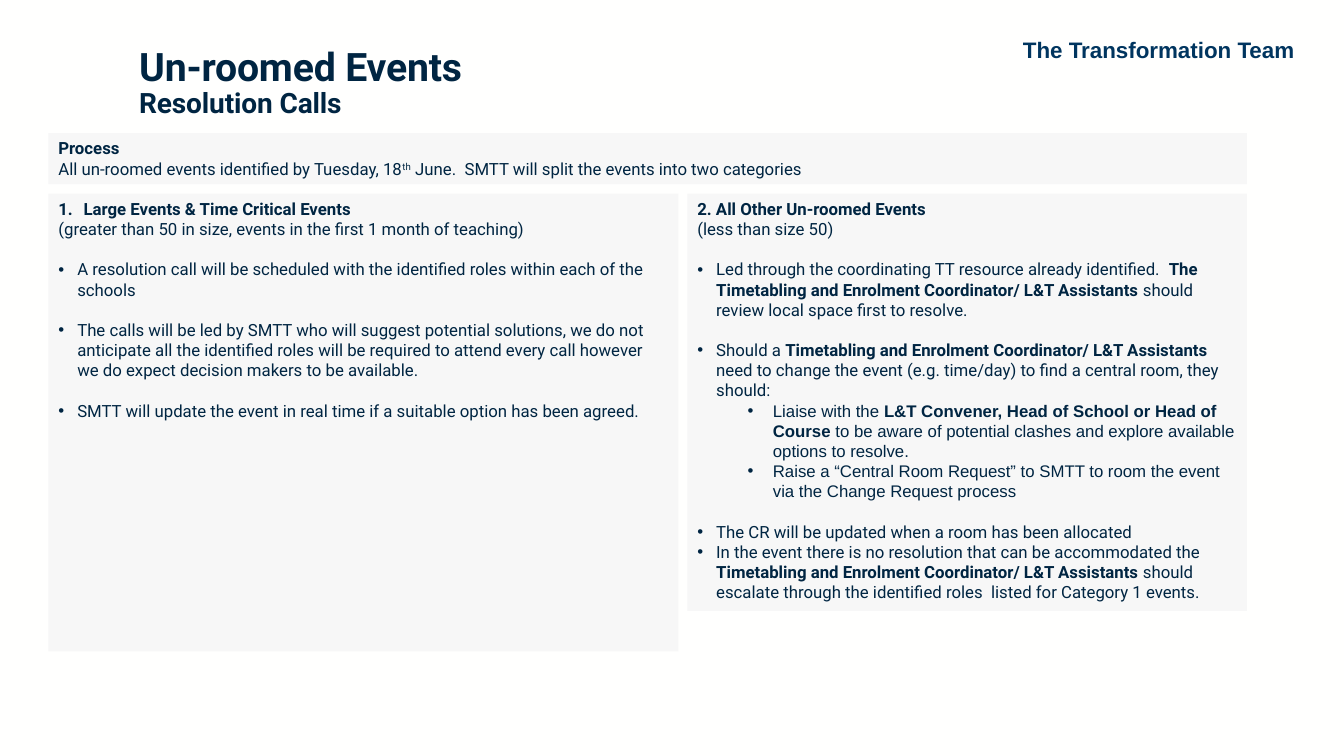
from dataclasses import dataclass

from lxml.etree import SubElement
from pptx import Presentation
from pptx.dml.color import RGBColor
from pptx.enum.shapes import MSO_SHAPE
from pptx.enum.text import MSO_ANCHOR, PP_ALIGN
from pptx.oxml.ns import qn
from pptx.util import Pt


@dataclass(frozen=True)
class Theme:
    background: RGBColor = RGBColor(0xFF, 0xFF, 0xFE)
    panel: RGBColor = RGBColor(0xF7, 0xF7, 0xF7)
    ink: RGBColor = RGBColor(0x00, 0x25, 0x42)
    team: RGBColor = RGBColor(0x00, 0x35, 0x5F)
    main_font: str = "Roboto"
    second_font: str = "Arial"
    title_size: int = 28
    subtitle_size: int = 20
    team_size: int = 16
    body_size: int = 12
    gap: float = 14.4


@dataclass
class Line:
    spans: list
    bullet: str = ""
    margin: float = 0
    hang: float = 0
    before: float = 0
    font: str = Theme.main_font


def point(*spans, before=0):
    return Line(list(spans), "•", 13.5, 13.5, before)


def subpoint(*spans):
    return Line(list(spans), "•", 54, 18, font=Theme.second_font)


class Builder:
    def __init__(self, deck, theme):
        self.theme = theme
        self.page = deck.slides.add_slide(deck.slide_layouts[5])
        fill = self.page.background.fill
        fill.solid()
        fill.fore_color.rgb = theme.background

    def span(self, para, text, size, bold=False, font=None, color=None):
        span = para.add_run()
        span.text = text
        span.font.size = Pt(size)
        span.font.bold = bold
        span.font.name = font or self.theme.main_font
        span.font.color.rgb = color or self.theme.ink
        return span

    def title(self, left, top, width, height, heading, subheading):
        box = self.page.shapes.title
        box.left, box.top, box.width, box.height = Pt(left), Pt(top), Pt(width), Pt(height)
        box.text_frame.word_wrap = True
        box.text_frame.vertical_anchor = MSO_ANCHOR.MIDDLE
        para = box.text_frame.paragraphs[0]
        para.alignment = PP_ALIGN.LEFT
        para.line_spacing = 0.9
        first = self.span(para, heading, self.theme.title_size, True)
        para.add_line_break()
        second = self.span(para, subheading, self.theme.subtitle_size, True)
        for span in (first, second):
            span.font._element.set("spc", "-10")

    def label(self, left, top, width, height, text):
        box = self.page.shapes.add_textbox(Pt(left), Pt(top), Pt(width), Pt(height))
        box.text_frame.word_wrap = True
        para = box.text_frame.paragraphs[0]
        para.alignment = PP_ALIGN.CENTER
        self.span(para, text, self.theme.team_size, True, self.theme.second_font, self.theme.team)

    def bullet(self, para, line):
        properties = para._p.get_or_add_pPr()
        properties.set("marL", str(Pt(line.margin)))
        properties.set("indent", str(-Pt(line.hang)))
        if line.bullet == "1.":
            SubElement(properties, qn("a:buFont"), typeface="+mj-lt")
            SubElement(properties, qn("a:buAutoNum"), type="arabicPeriod")
        else:
            SubElement(properties, qn("a:buFont"), typeface=self.theme.second_font)
            SubElement(properties, qn("a:buChar"), char=line.bullet)

    def panel(self, left, top, width, height, lines):
        box = self.page.shapes.add_shape(
            MSO_SHAPE.RECTANGLE, Pt(left), Pt(top), Pt(width), Pt(height))
        box.shadow.inherit = False
        box.fill.solid()
        box.fill.fore_color.rgb = self.theme.panel
        box.line.fill.background()
        frame = box.text_frame
        frame.word_wrap = True
        frame.vertical_anchor = MSO_ANCHOR.TOP
        for index, line in enumerate(lines):
            para = frame.add_paragraph() if index else frame.paragraphs[0]
            para.alignment = PP_ALIGN.LEFT
            if line.before:
                para.space_before = Pt(line.before)
            if line.bullet:
                self.bullet(para, line)
            for text, style in line.spans:
                span = self.span(para, text, self.theme.body_size, style == "bold", line.font)
                if style == "super":
                    span.font._element.set("baseline", "30000")


def main():
    theme = Theme()
    deck = Presentation()
    deck.slide_width, deck.slide_height = Pt(960), Pt(540)
    slide = Builder(deck, theme)
    gap = theme.gap
    coordinators = ("Timetabling and Enrolment Coordinator/ L&T Assistants ", "bold")

    process = [
        Line([("Process", "bold")]),
        Line([("All un-roomed events identified by Tuesday, 18", ""), ("th", "super"),
              (" June.  SMTT will split the events into two categories", "")]),
    ]
    large_events = [
        Line([("Large Events & Time Critical Events", "bold")], "1.", 18, 18),
        Line([("(greater than 50 in size, events in the first 1 month of teaching)", "")]),
        point(("A resolution call will be scheduled with the identified roles within each "
               "of the schools", ""), before=gap),
        point(("The calls will be led by SMTT who will suggest potential solutions, we do not "
               "anticipate all the identified roles will be required to attend every call "
               "however we do expect decision makers to be available.", ""), before=gap),
        point(("SMTT will update the event in real time if a suitable option has been agreed.",
               ""), before=gap),
    ]
    other_events = [
        Line([("2. All Other Un-roomed Events", "bold")]),
        Line([("(less than size 50)", "")]),
        point(("Led through the coordinating TT resource already identified.  ", ""),
              ("The ", "bold"), coordinators,
              ("should review local space first to resolve.", ""), before=gap),
        point(("Should a ", ""), coordinators,
              ("need to change the event (e.g. time/day) to find a central room, they should:",
               ""), before=gap),
        subpoint(("Liaise with the ", ""),
                 ("L&T Convener, Head of School or Head of Course ", "bold"),
                 ("to be aware of potential clashes and explore available options to resolve.",
                  "")),
        subpoint(("Raise a “Central Room Request” to SMTT to room the event "
                  "via the Change Request process", "")),
        point(("The CR will be updated when a room has been allocated", ""), before=gap),
        point(("In the event there is no resolution that can be accommodated the ", ""),
              coordinators,
              ("should escalate through the identified roles  listed for Category 1 events.",
               "")),
    ]

    left, width, column_gap, column_top = 34.6, 856, 6.4, 138.4
    large_width = 450
    other_left = left + large_width + column_gap
    slide.label(716.4, 22.3, 222.5, 26.6, "The Transformation Team")
    slide.title(92.2, 16.6, 599, 86.4, "Un-roomed Events", "Resolution Calls")
    slide.panel(left, column_top, large_width, 327, large_events)
    slide.panel(other_left, column_top, left + width - other_left, 298, other_events)
    slide.panel(left, 95.2, width, 36.4, process)
    deck.save("out.pptx")


if __name__ == "__main__":
    main()
